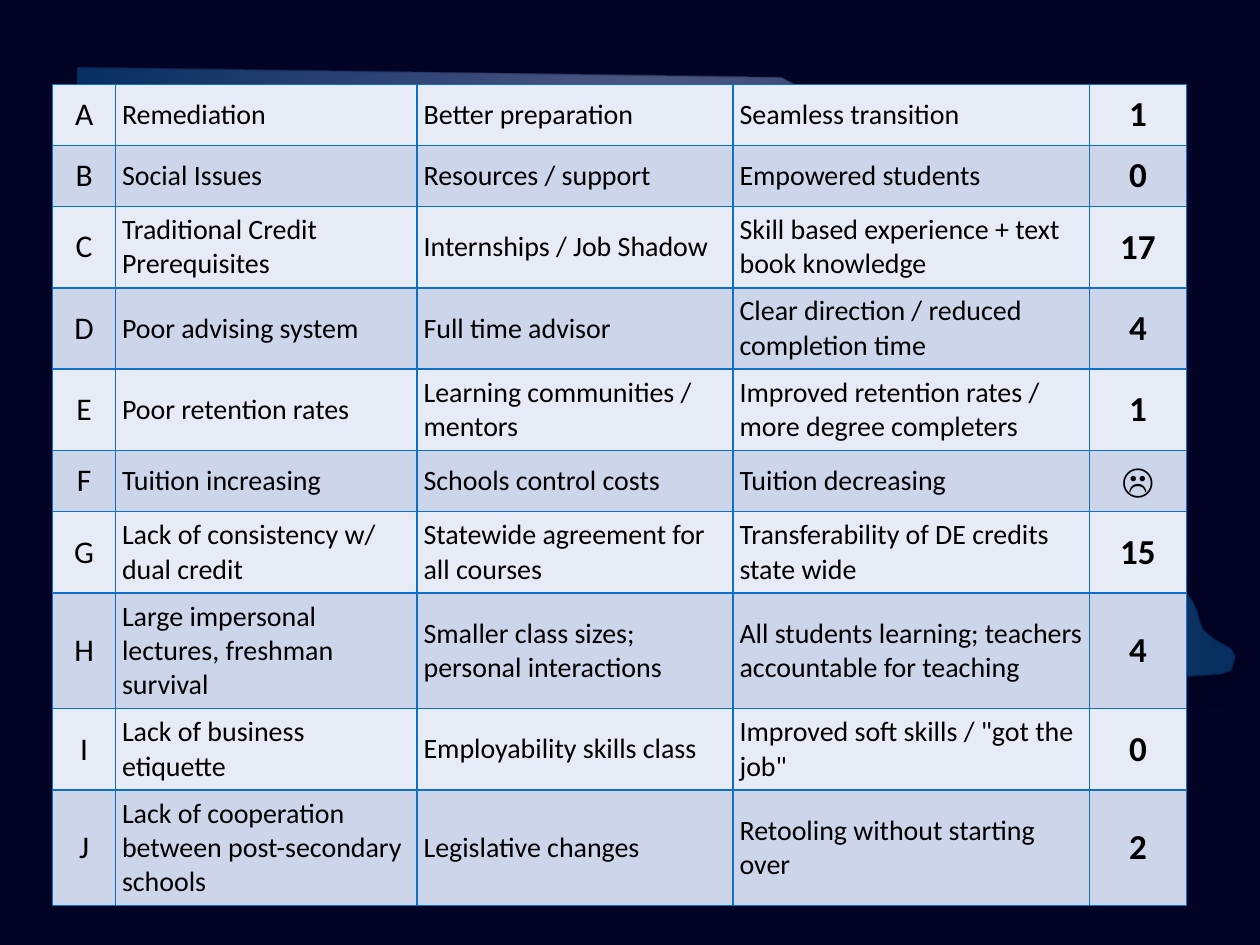
"""Build a slide with a ten-row table of issues, remedies, outcomes and votes."""
from pptx import Presentation
from pptx.dml.color import RGBColor
from pptx.enum.shapes import MSO_SHAPE
from pptx.enum.text import MSO_ANCHOR, PP_ALIGN
from pptx.oxml import parse_xml
from pptx.oxml.ns import nsdecls
from pptx.util import Cm, Pt

BLACK = RGBColor(0x00, 0x00, 0x00)
NAVY = RGBColor(0x0A, 0x0D, 0x96)
EDGE = RGBColor(0x0F, 0x6F, 0xC6)
BANDS = [RGBColor(0xE7, 0xEB, 0xF5), RGBColor(0xCC, 0xD5, 0xEA)]
DEEP = RGBColor(0x0C, 0x59, 0x9F)
MID = RGBColor(0x6B, 0x8F, 0xCF)
PALE = RGBColor(0x91, 0xA9, 0xDD)
STOPS = [(0, DEEP), (33, MID), (47, PALE), (53, PALE), (68, MID), (100, DEEP)]

OUTLINE = [
    (62, 54), (53, 371), (251, 380), (258, 539), (324, 540), (484, 542),
    (647, 543), (806, 542), (908, 539), (968, 535), (977, 532), (980, 521),
    (977, 515), (962, 506), (955, 500), (952, 494), (950, 485), (946, 477),
    (937, 464), (935, 460), (935, 441), (921, 431), (920, 389), (917, 382),
    (912, 374), (911, 366), (906, 331), (900, 323), (896, 315), (895, 298),
    (883, 279), (880, 219), (878, 216), (868, 212), (863, 204), (859, 202),
    (856, 181), (844, 160), (841, 150), (835, 145), (827, 141), (809, 114),
    (801, 112), (805, 110), (799, 105), (782, 100), (767, 95), (763, 92),
    (758, 83), (752, 80), (741, 82), (725, 86), (713, 90), (665, 90),
    (652, 79), (620, 62),
]
WIDTHS = [1.27, 6.08, 6.37, 7.18, 1.96]
ROWS = [
    ("A", "Remediation", "Better preparation", "Seamless transition", "1"),
    ("B", "Social Issues", "Resources / support", "Empowered students", "0"),
    ("C", "Traditional Credit Prerequisites", "Internships / Job Shadow",
     "Skill based experience + text book knowledge", "17"),
    ("D", "Poor advising system", "Full time advisor",
     "Clear direction / reduced completion time", "4"),
    ("E", "Poor retention rates", "Learning communities / mentors",
     "Improved retention rates / more degree completers", "1"),
    ("F", "Tuition increasing", "Schools control costs", "Tuition decreasing", "☹"),
    ("G", "Lack of consistency w/ dual credit", "Statewide agreement for all courses",
     "Transferability of DE credits state wide", "15"),
    ("H", "Large impersonal lectures, freshman survival",
     "Smaller class sizes; personal interactions",
     "All students learning; teachers accountable for teaching", "4"),
    ("I", "Lack of business etiquette", "Employability skills class",
     'Improved soft skills / "got the job"', "0"),
    ("J", "Lack of cooperation between post-secondary schools",
     "Legislative changes", "Retooling without starting over", "2"),
]
SIZES = [18, 16, 16, 16, 20]

deck = Presentation()
deck.slide_width, deck.slide_height = Cm(25.4), Cm(19.05)
slide = deck.slides.add_slide(deck.slide_layouts[6])
slide.background.fill.solid()
slide.background.fill.fore_color.rgb = BLACK

veil = slide.shapes.add_shape(
    MSO_SHAPE.RECTANGLE, 0, 0, deck.slide_width, deck.slide_height)
veil.shadow.inherit = False
veil.line.fill.background()
veil.fill.solid()
veil.fill.fore_color.rgb = NAVY
tint = veil.fill._xPr.find(".//{*}srgbClr")
tint.append(parse_xml(f'<a:alpha {nsdecls("a")} val="25000"/>'))

pen = slide.shapes.build_freeform(*OUTLINE[0], scale=Cm(2.54) / 100)
pen.add_line_segments(OUTLINE[1:], close=True)
state = pen.convert_to_shape()
state.shadow.inherit = False
state.line.fill.background()
state.fill.background()
props = state.fill._xPr
stops = "".join(
    f'<a:gs pos="{pos * 1000}"><a:srgbClr val="{hue}"><a:alpha val="50000"/>'
    "</a:srgbClr></a:gs>" for pos, hue in STOPS)
props.replace(props.find("{*}noFill"), parse_xml(
    f'<a:gradFill {nsdecls("a")} rotWithShape="1"><a:gsLst>{stops}</a:gsLst>'
    '<a:lin ang="0" scaled="0"/></a:gradFill>'))
props.find("{*}effectLst").append(parse_xml(
    f'<a:outerShdw {nsdecls("a")} blurRad="{Pt(15)}" dist="{Pt(18)}" dir="2700000">'
    f'<a:srgbClr val="{BLACK}"><a:alpha val="26000"/></a:srgbClr></a:outerShdw>'))

grid = slide.shapes.add_table(
    len(ROWS), len(WIDTHS), Cm(1.06), Cm(1.7), Cm(sum(WIDTHS)), Cm(12.3)).table
grid.first_row = grid.horz_banding = False
for col, width in zip(grid.columns, WIDTHS):
    col.width = Cm(width)

for i, texts in enumerate(ROWS):
    grid.rows[i].height = Cm(1.23)
    for j, text in enumerate(texts):
        cell = grid.cell(i, j)
        cell.vertical_anchor = MSO_ANCHOR.MIDDLE
        cell.margin_left = cell.margin_right = Cm(0.13)
        cell.margin_top = cell.margin_bottom = Cm(0.13)
        for side in "LRTB":
            cell._tc.get_or_add_tcPr().append(parse_xml(
                f'<a:ln{side} {nsdecls("a")} w="{Pt(1)}"><a:solidFill>'
                f'<a:srgbClr val="{EDGE}"/></a:solidFill></a:ln{side}>'))
        cell.fill.solid()
        cell.fill.fore_color.rgb = BANDS[i % 2]
        para = cell.text_frame.paragraphs[0]
        para.alignment = PP_ALIGN.CENTER if j in (0, 4) else PP_ALIGN.LEFT
        run = para.add_run()
        run.text = text
        run.font.name = "Calibri"
        run.font.size = Pt(SIZES[j])
        run.font.bold = j == 4
        run.font.color.rgb = BLACK

deck.save("out.pptx")
